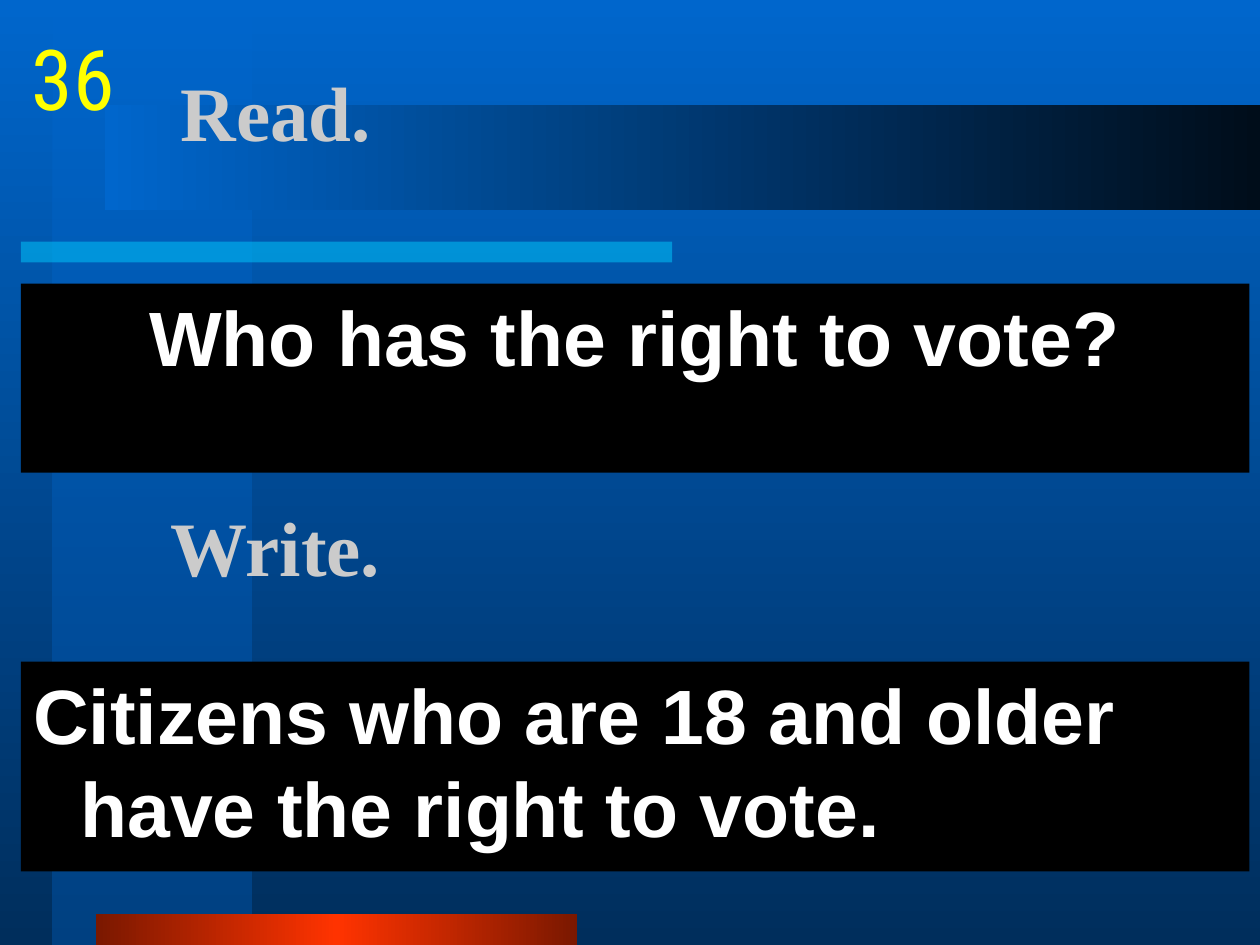
from dataclasses import dataclass
from typing import Optional

from lxml import etree
from pptx import Presentation
from pptx import util as u
from pptx.dml.color import RGBColor
from pptx.enum import shapes, text
from pptx.oxml.ns import qn


@dataclass(frozen=True)
class Theme:
    sky: str = "0066CC"
    deep: str = "002E5C"
    column_end: str = "0053A6"
    night: str = "000D1A"
    cyan: str = "00CCFF"
    red: str = "FF3300"
    dark_red: str = "7A1800"
    panel: str = "000000"
    heading: str = "CBCBCB"
    answer: str = "FFFFFF"
    number: str = "FFFF00"
    serif: str = "Times New Roman"
    sans: str = "Arial"
    condensed: str = "Roboto Condensed"
    text_size: int = 44
    number_size: int = 48


THEME = Theme()


@dataclass(frozen=True)
class Area:
    """Position and size in centimetres."""
    left: float
    top: float
    width: float
    height: float

    def lengths(self) -> tuple:
        return tuple(u.Cm(v) for v in (self.left, self.top, self.width, self.height))


@dataclass(frozen=True)
class Bar:
    area: Area
    colors: tuple
    angle: int = 0
    opacity: int = 100


@dataclass(frozen=True)
class Label:
    words: str
    area: Area
    font: str
    color: str
    size: int = THEME.text_size
    bold: bool = True
    anchor: text.MSO_ANCHOR = text.MSO_ANCHOR.TOP
    align: text.PP_ALIGN = text.PP_ALIGN.LEFT
    panel: Optional[str] = None
    hanging: float = 0
    side_margin: float = 0.25


BARS = [
    Bar(Area(1.06, 0, 4.02, 19.05), (THEME.sky, THEME.column_end), 90, 50),
    Bar(Area(0.42, 4.87, 13.13, 0.42), (THEME.cyan,), opacity=50),
    Bar(Area(1.93, 18.42, 9.71, 0.63), (THEME.dark_red, THEME.red, THEME.dark_red)),
    Bar(Area(2.12, 2.12, 23.28, 2.12), (THEME.sky, THEME.night)),
]

HEADING = dict(font=THEME.serif, color=THEME.heading, anchor=text.MSO_ANCHOR.MIDDLE)
PANEL = dict(font=THEME.sans, color=THEME.answer, panel=THEME.panel, hanging=0.95)

LABELS = [
    Label("Read.", Area(3.39, 0.64, 21.59, 3.17), **HEADING),
    Label("Who has the right to vote?", Area(0.42, 5.72, 24.77, 3.81),
          align=text.PP_ALIGN.CENTER, **PANEL),
    Label("Write.", Area(3.18, 8.89, 21.59, 4.23), **HEADING),
    Label("Citizens who are 18 and older have the right to vote.",
          Area(0.42, 13.34, 24.77, 4.23), **PANEL),
    Label("36", Area(0.42, 0.42, 2.12, 2.12), THEME.condensed, THEME.number,
          THEME.number_size, bold=False, align=text.PP_ALIGN.CENTER, side_margin=0),
]


def set_gradient(owner, fill, colors: tuple, angle: int) -> None:
    """Spread the colours evenly along a straight gradient."""
    fill.gradient()
    gradient = next(owner.iter(qn("a:gradFill")))
    stops = gradient.find(qn("a:gsLst"))
    for stop in list(stops):
        stops.remove(stop)
    for index, color in enumerate(colors):
        position = round(100000 * index / (len(colors) - 1))
        stop = etree.SubElement(stops, qn("a:gs"), pos=str(position))
        etree.SubElement(stop, qn("a:srgbClr"), val=color)
    gradient.find(qn("a:lin")).set("ang", str(angle * 60000))


def add_rectangle(page, area: Area):
    box = page.shapes.add_shape(shapes.MSO_SHAPE.RECTANGLE, *area.lengths())
    box.shadow.inherit = False
    box.line.fill.background()
    return box


def draw_bar(page, bar: Bar) -> None:
    box = add_rectangle(page, bar.area)
    if len(bar.colors) > 1:
        set_gradient(box.element, box.fill, bar.colors, bar.angle)
    else:
        box.fill.solid()
        box.fill.fore_color.rgb = RGBColor.from_string(bar.colors[0])
    if bar.opacity < 100:
        for color in box.element.spPr.iter(qn("a:srgbClr")):
            etree.SubElement(color, qn("a:alpha"), val=str(bar.opacity * 1000))


def draw_label(page, label: Label) -> None:
    if label.panel:
        box = add_rectangle(page, label.area)
        box.fill.solid()
        box.fill.fore_color.rgb = RGBColor.from_string(label.panel)
    else:
        box = page.shapes.add_textbox(*label.area.lengths())
    frame = box.text_frame
    frame.text = label.words
    frame.word_wrap = True
    frame.margin_left = frame.margin_right = u.Cm(label.side_margin)
    frame.vertical_anchor = label.anchor
    para = frame.paragraphs[0]
    para.alignment = label.align
    if label.hanging:
        para.space_before = u.Pt(label.size * 0.2)
        indent = u.Cm(label.hanging)
        properties = para._p.get_or_add_pPr()
        properties.set("marL", str(indent))
        properties.set("indent", str(-indent))
    span = para.runs[0]
    span.font.name = label.font
    span.font.size = u.Pt(label.size)
    span.font.bold = label.bold
    span.font.color.rgb = RGBColor.from_string(label.color)


def main() -> None:
    deck = Presentation()
    deck.slide_width, deck.slide_height = u.Cm(25.4), u.Cm(19.05)
    page = deck.slides.add_slide(deck.slide_layouts[6])

    # Background and decorative bars
    set_gradient(page.element, page.background.fill, (THEME.sky, THEME.deep), 90)
    for bar in BARS:
        draw_bar(page, bar)

    # Headings, panels and slide number
    for label in LABELS:
        draw_label(page, label)

    deck.save("out.pptx")


if __name__ == "__main__":
    main()
